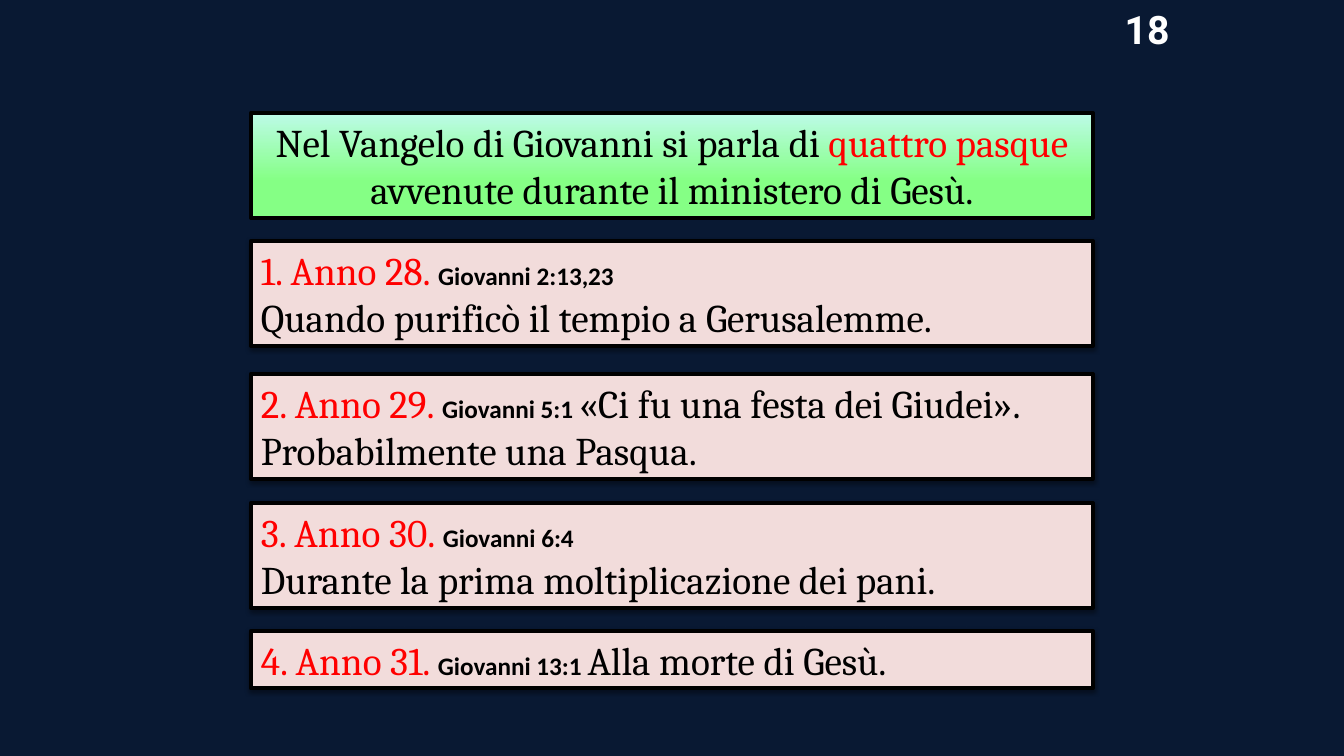
from lxml import etree
from pptx import Presentation
from pptx.dml.color import RGBColor
from pptx.enum.shapes import MSO_SHAPE
from pptx.enum.text import MSO_ANCHOR, MSO_AUTO_SIZE, PP_ALIGN
from pptx.oxml import parse_xml
from pptx.oxml.ns import qn
from pptx.util import Pt

RECT = MSO_SHAPE.RECTANGLE
TOP = MSO_ANCHOR.TOP
GROW = MSO_AUTO_SIZE.SHAPE_TO_FIT_TEXT
LEFT, CENTER = PP_ALIGN.LEFT, PP_ALIGN.CENTER
NS = 'xmlns:a="http://schemas.openxmlformats.org/drawingml/2006/main"'

HUES = {
    "navy": "091933", "mint": "BDFBE8", "green": "85FF85", "rose": "F2DCDB",
    "black": "000000", "red": "FF0000", "white": "FFFFFF",
}
# Text styles: font, size, bold, colour, outlined
STYLES = {
    "body": ("Cambria", 28, False, "black", True),
    "key": ("Cambria", 28, False, "red", True),
    "verse": ("Calibri", 18, True, "black", False),
    "page": ("Roboto", 28, True, "white", False),
}
BOX_X, BOX_W = 179.3, 601.2
TALL, LOW = 74.9, 41

EASTERS = [
    (172.1, TALL, [
        [("1. Anno 28. ", "key"), ("Giovanni 2:13,23", "verse")],
        [("Quando purificò il tempio a Gerusalemme.", "body")]]),
    (267.1, TALL, [
        [("2. Anno 29. ", "key"), ("Giovanni 5:1 ", "verse"),
         ("«Ci fu una festa dei Giudei». Probabilmente una Pasqua.", "body")]]),
    (359.3, TALL, [
        [("3. Anno 30. ", "key"), ("Giovanni 6:4", "verse")],
        [("Durante la prima moltiplicazione dei pani.", "body")]]),
    (450.7, LOW, [
        [("4. Anno 31. ", "key"), ("Giovanni 13:1 ", "verse"),
         ("Alla morte di Gesù.", "body")]]),
]
TITLE = [[("Nel Vangelo di Giovanni si parla di ", "body"),
          ("quattro pasque", "key"),
          (" avvenute durante il ministero di Gesù.", "body")]]


def rgb(name):
    return RGBColor.from_string(HUES[name])


class Deck:
    def __init__(self):
        self.prs = Presentation()
        self.prs.slide_width, self.prs.slide_height = Pt(960), Pt(540)
        self.slide = self.prs.slides.add_slide(self.prs.slide_layouts[5])
        fill = self.slide.background.fill
        fill.solid()
        fill.fore_color.rgb = rgb("navy")

    def put_text(self, shape, paras, align, wrap=True):
        frame = shape.text_frame
        frame.word_wrap, frame.auto_size = wrap, GROW
        frame.vertical_anchor = TOP
        for i, runs in enumerate(paras):
            para = frame.add_paragraph() if i else frame.paragraphs[0]
            para.alignment = align
            same = len({STYLES[style][:3] for _, style in runs}) == 1
            for text, style in runs:
                face, size, bold, hue, edge = STYLES[style]
                run = para.add_run()
                run.text = text
                font = para.font if same else run.font
                font.name, font.size, font.bold = face, Pt(size), bold
                run.font.color.rgb = rgb(hue)
                if edge:
                    self.edge(run, hue)

    def edge(self, run, hue):
        """Outline the letters of a run."""
        line = parse_xml(
            f'<a:ln {NS} w="{Pt(1.5)}"><a:solidFill>'
            f'<a:srgbClr val="{HUES[hue]}"/></a:solidFill></a:ln>')
        run.font._element.insert(0, line)

    def border(self, shape):
        shape.line.color.rgb = rgb("black")
        shape.line.width = Pt(3)

    def title(self, y, paras):
        shape = self.slide.shapes.title
        shape.left, shape.top = Pt(BOX_X), Pt(y)
        shape.width, shape.height = Pt(BOX_W), Pt(TALL)
        shape.fill.gradient()
        shape.fill.gradient_angle = 270
        stops = shape.fill.gradient_stops
        for stop, hue, place in zip(stops, ("mint", "green"), (0, 0.65)):
            stop.color.rgb, stop.position = rgb(hue), place
        self.border(shape)
        self.put_text(shape, paras, CENTER)

    def card(self, y, high, paras):
        shape = self.slide.shapes.add_shape(
            RECT, Pt(BOX_X), Pt(y), Pt(BOX_W), Pt(high))
        shape.fill.solid()
        shape.fill.fore_color.rgb = rgb("rose")
        self.border(shape)
        self.shade(shape)
        self.put_text(shape, paras, LEFT)

    def shade(self, shape):
        """Drop a soft shadow below the shape."""
        shape.shadow.inherit = False
        effects = shape._element.spPr.find(qn("a:effectLst"))
        cast = etree.SubElement(
            effects, qn("a:outerShdw"), blurRad=str(Pt(3.1)),
            dist=str(Pt(1.6)), dir="5400000", rotWithShape="0")
        tint = etree.SubElement(cast, qn("a:srgbClr"), val=HUES["black"])
        etree.SubElement(tint, qn("a:alpha"), val="38000")

    def label(self, x, y, wide, high, text, style):
        box = self.slide.shapes.add_textbox(Pt(x), Pt(y), Pt(wide), Pt(high))
        self.put_text(box, [[(text, style)]], CENTER, wrap=False)


def main():
    deck = Deck()
    deck.title(80.6, TITLE)
    for y, high, paras in EASTERS:
        deck.card(y, high, paras)
    deck.label(794.2, 0, 50.4, LOW, "18", "page")
    deck.prs.save("out.pptx")


if __name__ == "__main__":
    main()
